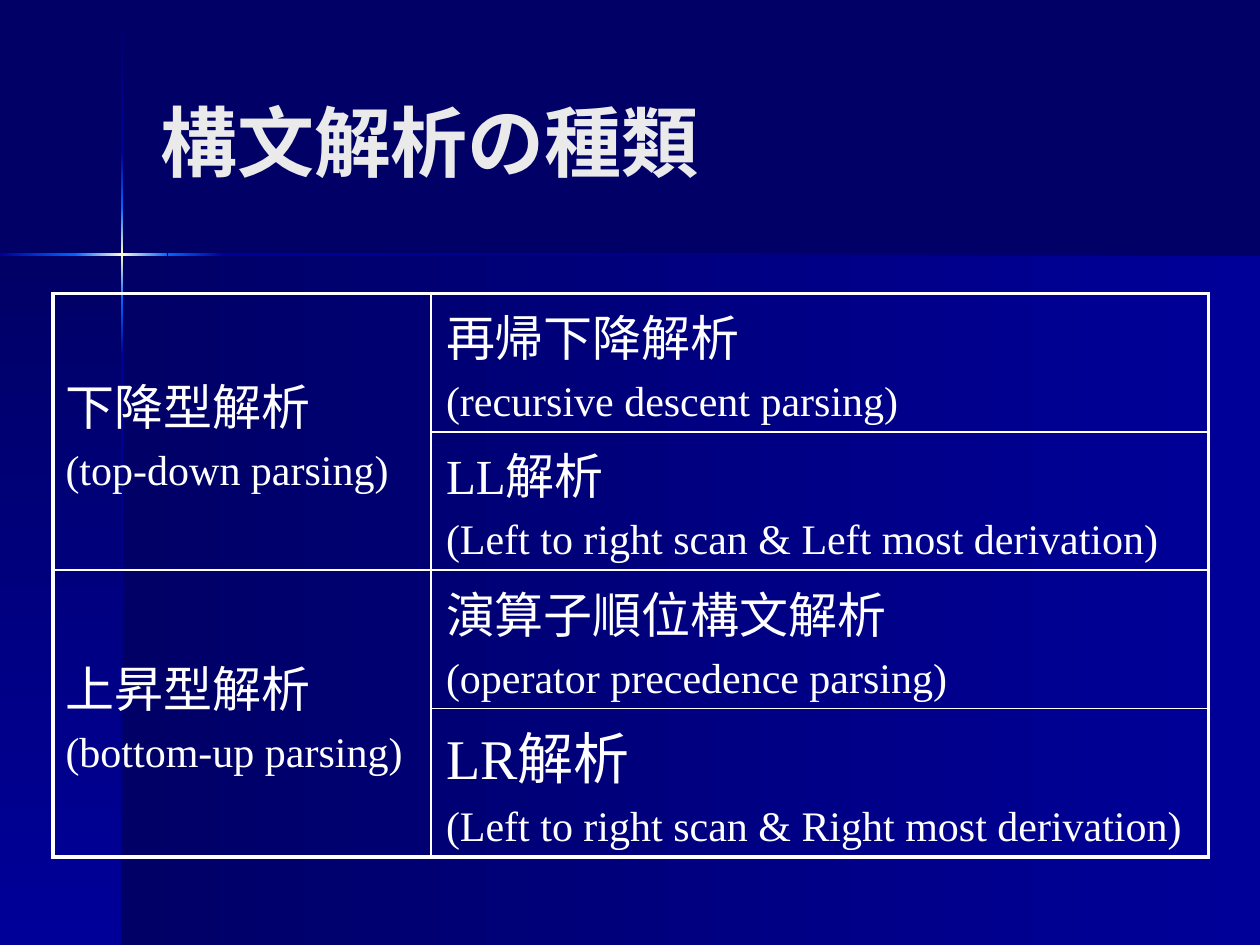
from copy import deepcopy

from lxml import etree
from pptx import Presentation
from pptx import util as u
from pptx.dml import color
from pptx.enum import shapes, text
from pptx.oxml import ns

COLORS = {
    "night": "000066",
    "navy": "000099",
    "blue": "0066FF",
    "spark": "FFFFCC",
    "title": "EAEAEA",
    "white": "FFFFFF",
}
FONT = "Times New Roman"
OUTER, INNER = 2.25, 1

FADE_IN, FADE_OUT = ("night", "navy"), ("navy", "night")
GLOW_IN, GLOW_OUT = ("navy", "blue"), ("blue", "navy")
FLARE = ("blue", "spark", "blue")
BACKDROP = [
    ((0.97, 2.02, 9.03, 5.48), FADE_IN, False),
    ((0, 2.02, 0.97, 5.48), FADE_IN, True),
]
VERTICAL_RAY = [(0.01, 1.21, FADE_IN), (2.82, 7.5, FADE_OUT), (2.38, 2.82, GLOW_OUT),
                (1.21, 1.65, GLOW_IN), (1.65, 2.38, FLARE)]
HORIZONTAL_RAY = [(1.77, 10, FADE_OUT), (0, 0.61, GLOW_IN), (1.33, 1.77, GLOW_OUT),
                  (0.6, 1.33, FLARE)]

FAMILIES = [
    ("下降型解析", "(top-down parsing)", [
        ("再帰下降解析", "(recursive descent parsing)", 28),
        ("LL解析", "(Left to right scan & Left most derivation)", 28),
    ]),
    ("上昇型解析", "(bottom-up parsing)", [
        ("演算子順位構文解析", "(operator precedence parsing)", 28),
        ("LR解析", "(Left to right scan & Right most derivation)", 32),
    ]),
]


def rgb(name):
    """Return the named colour."""
    return color.RGBColor.from_string(COLORS[name])


def write(paragraph, wording, size=24, ink="white", bold=False, before=0):
    """Write one formatted run into a paragraph."""
    paragraph.alignment = text.PP_ALIGN.LEFT
    paragraph.space_before = u.Pt(before)
    run = paragraph.add_run()
    run.text = wording
    run.font.name = FONT
    run.font.size = u.Pt(size)
    run.font.bold = bold
    run.font.color.rgb = rgb(ink)


class SlideBuilder:
    """Hold the style and the current slide."""

    def __init__(self, slide):
        """Start on a slide with a plain dark background."""
        self.slide = slide
        slide.background.fill.solid()
        slide.background.fill.fore_color.rgb = rgb("night")

    def gradient(self, box, names, vertical):
        """Add a rectangle with evenly spaced gradient stops."""
        panel = self.slide.shapes.add_shape(
            shapes.MSO_SHAPE.RECTANGLE, *(u.Inches(side) for side in box))
        panel.shadow.inherit = False
        panel.line.fill.background()
        panel.fill.gradient()
        panel.fill.gradient_angle = 270 if vertical else 0
        stop_list = panel._element.spPr.find(".//" + ns.qn("a:gsLst"))
        for _ in names[2:]:
            stop_list.append(deepcopy(stop_list[0]))
        for index, (stop, name) in enumerate(zip(panel.fill.gradient_stops, names)):
            stop.position = index / (len(names) - 1)
            stop.color.rgb = rgb(name)

    def title(self, wording):
        """Place and format the title in front of the backdrop."""
        heading = self.slide.shapes.title
        heading.left, heading.top = u.Inches(1.17), u.Inches(0.33)
        heading.width, heading.height = u.Inches(8.25), u.Inches(1.57)
        frame = heading.text_frame
        frame.auto_size = text.MSO_AUTO_SIZE.NONE
        frame.vertical_anchor = text.MSO_ANCHOR.MIDDLE
        write(frame.paragraphs[0], wording, size=44, ink="title", bold=True)
        heading._element.getparent().append(heading._element)

    def borders(self, cell, widths):
        """Draw the left, right, top and bottom borders of a cell."""
        properties = cell._tc.get_or_add_tcPr()
        for side, width in zip("LRTB", widths):
            line = etree.SubElement(properties, ns.qn(f"a:ln{side}"), w=str(u.Pt(width)))
            solid = etree.SubElement(line, ns.qn("a:solidFill"))
            etree.SubElement(solid, ns.qn("a:srgbClr"), val=COLORS["white"])

    def cell(self, cell, japanese, english, size=28, left=0.1):
        """Fill a cell with a Japanese term and its English name."""
        cell.vertical_anchor = text.MSO_ANCHOR.MIDDLE
        cell.margin_left = u.Inches(left)
        frame = cell.text_frame
        write(frame.paragraphs[0], japanese, size=size, before=size * 0.2)
        write(frame.add_paragraph(), english, before=24 * 0.2)

    def table(self, families):
        """Add the table of parsing families and their methods."""
        count = sum(len(methods) for _, _, methods in families)
        grid = self.slide.shapes.add_table(
            count, 2, u.Inches(0.42), u.Inches(2.33), u.Inches(9.17), u.Inches(4.25)).table
        grid.first_row = grid.horz_banding = False
        grid.columns[0].width, grid.columns[1].width = u.Inches(3), u.Inches(6.17)
        start = 0
        for japanese, english, methods in families:
            end = start + len(methods) - 1
            grid.cell(start, 0).merge(grid.cell(end, 0))
            self.cell(grid.cell(start, 0), japanese, english)
            family_top = INNER if start else OUTER
            family_bottom = OUTER if end == count - 1 else INNER
            for row, (term, name, size) in enumerate(methods, start):
                family, method = grid.cell(row, 0), grid.cell(row, 1)
                self.cell(method, term, name, size=size, left=0.12)
                self.borders(family, (OUTER, INNER, family_top, family_bottom))
                self.borders(method, (INNER, OUTER,
                                      family_top if row == start else INNER,
                                      family_bottom if row == end else INNER))
                family.fill.background()
                method.fill.background()
            start = end + 1


def main():
    """Build the slide and save it."""
    deck = Presentation()
    deck.slide_width, deck.slide_height = u.Inches(10), u.Inches(7.5)
    builder = SlideBuilder(deck.slides.add_slide(deck.slide_layouts[5]))
    for box, names, vertical in BACKDROP:
        builder.gradient(box, names, vertical)
    for start, end, names in VERTICAL_RAY:
        builder.gradient((0.96, start, 0.02, end - start), names, True)
    for start, end, names in HORIZONTAL_RAY:
        builder.gradient((start, 2.01, end - start, 0.02), names, False)
    builder.title("構文解析の種類")
    builder.table(FAMILIES)
    deck.save("out.pptx")


if __name__ == "__main__":
    main()
